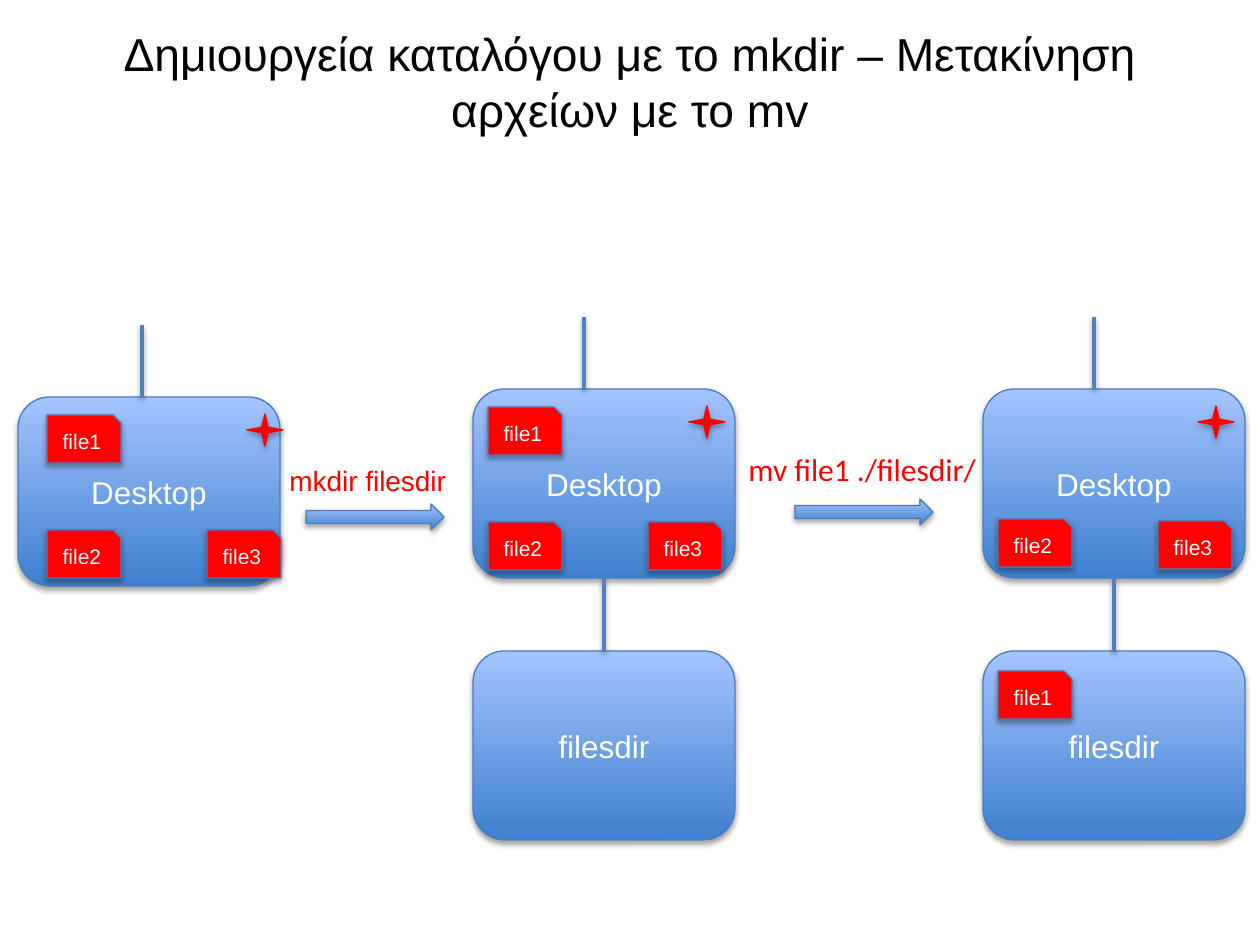
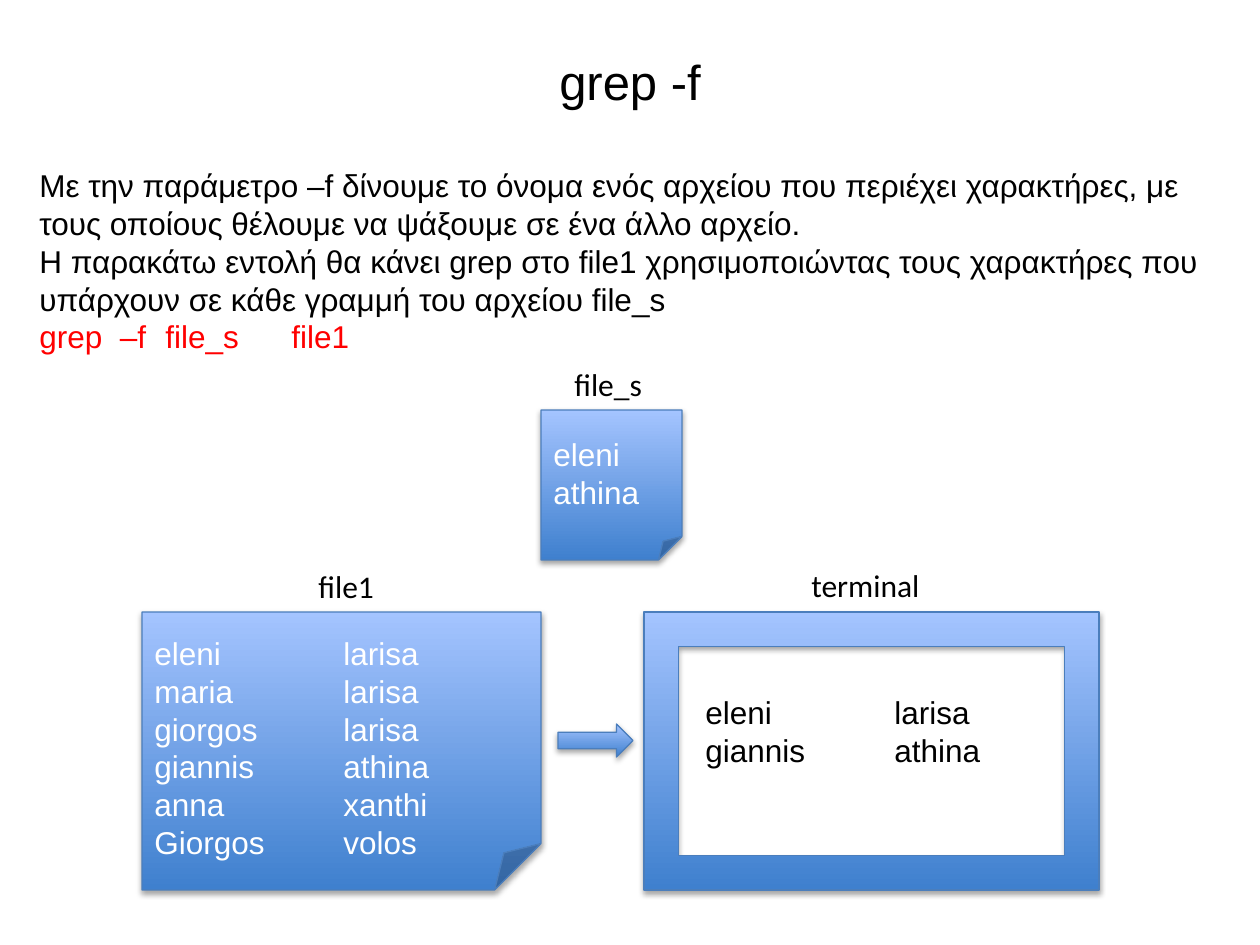
"""Build two slides on shell commands: mkdir with mv, and grep -f."""
from dataclasses import dataclass

from lxml.etree import SubElement
from pptx import Presentation
from pptx.dml.color import RGBColor
from pptx.enum.shapes import MSO_CONNECTOR, MSO_SHAPE
from pptx.enum.text import MSO_ANCHOR, MSO_AUTO_SIZE, PP_ALIGN
from pptx.oxml.ns import qn
from pptx.shapes.autoshape import Shape
from pptx.shapes.connector import Connector
from pptx.slide import Slide
from pptx.text.text import TextFrame
from pptx.util import Emu, Pt

PX_PER_INCH = 126
TAB_STEP = 63


@dataclass(frozen=True)
class TextStyle:
    """Font, size and colour of a text."""
    size: float
    color: str
    font: str = "Arial"


@dataclass(frozen=True)
class Theme:
    """Colours and type sizes of the deck."""
    gradient: tuple[str, str] = ("3F80CE", "A4C4FF")
    outline: str = "4B7EBC"
    stem: str = "4F81BD"
    accent: str = "FF0000"
    outline_width: float = 0.75
    stem_width: float = 2
    long_title: TextStyle = TextStyle(26.4, "000000")
    title: TextStyle = TextStyle(28, "000000")
    body: TextStyle = TextStyle(18, "000000")
    command: TextStyle = TextStyle(18, "FF0000")
    box: TextStyle = TextStyle(18, "FFFFFF")
    file: TextStyle = TextStyle(12, "FFFFFF")
    caption: TextStyle = TextStyle(18, "000000", "Calibri")
    mkdir: TextStyle = TextStyle(16, "FF0000")
    move: TextStyle = TextStyle(18, "FF0000", "Calibri")


THEME = Theme()


@dataclass(frozen=True)
class Area:
    """A rectangle in px."""
    left: int
    top: int
    width: int
    height: int

    def emu(self) -> tuple[Emu, Emu, Emu, Emu]:
        """Return the rectangle in EMU."""
        return px(self.left), px(self.top), px(self.width), px(self.height)


@dataclass(frozen=True)
class File:
    """A file tag, placed from the corner of its directory."""
    name: str
    left: int
    top: int


@dataclass(frozen=True)
class Directory:
    """A directory box with the files in it."""
    name: str
    left: int
    top: int
    files: tuple[File, ...] = ()


@dataclass(frozen=True)
class Stage:
    """The state of the tree after a command."""
    desktop: Directory
    stem_x: int
    star_x: int
    child: Directory | None = None


@dataclass(frozen=True)
class Label:
    """A one-line text without a frame."""
    text: str
    area: Area
    style: TextStyle = THEME.caption


STAGES = (
    Stage(Directory("Desktop", 18, 397, (File("file1", 29, 18), File("file2", 29, 133), File("file3", 189, 133))),
          142, 247),
    Stage(Directory("Desktop", 473, 389, (File("file1", 15, 18), File("file2", 15, 133), File("file3", 175, 133))),
          584, 689, Directory("filesdir", 473, 651)),
    Stage(Directory("Desktop", 983, 389, (File("file2", 15, 130), File("file3", 175, 132))),
          1094, 1198, Directory("filesdir", 983, 651, (File("file1", 15, 20),))),
)
COMMANDS = (
    Label("mkdir filesdir", Area(277, 457, 184, 47), THEME.mkdir),
    Label("mv file1 ./filesdir/", Area(736, 444, 256, 50), THEME.move),
)
COMMAND_ARROWS = (Area(306, 504, 138, 26), Area(795, 499, 138, 26))
CAPTIONS = (
    Label("file1", Area(306, 561, 82, 50)),
    Label("terminal", Area(799, 560, 135, 50)),
    Label("file_s", Area(562, 359, 95, 50)),
)
PEOPLE = (("eleni", "larisa"), ("maria", "larisa"), ("giorgos", "larisa"),
          ("giannis", "athina"), ("anna", "xanthi"), ("Giorgos", "volos"))
MATCHES = (("eleni", "larisa"), ("giannis", "athina"))
INTRO = (
    "Με την παράμετρο –f δίνουμε το όνομα ενός αρχείου που περιέχει χαρακτήρες, "
    "με τους οποίους θέλουμε να ψάξουμε σε ένα άλλο αρχείο.",
    "H παρακάτω εντολή θα κάνει grep στο file1 χρησιμοποιώντας τους χαρακτήρες "
    "που υπάρχουν σε κάθε γραμμή του αρχείου file_s",
    "grep  –f\tfile_s\tfile1",
)


def px(length: int) -> Emu:
    """Turn px into EMU."""
    return Emu(round(length * 914400 / PX_PER_INCH))


def table_lines(rows: tuple[tuple[str, str], ...]) -> tuple[str, ...]:
    """Join the two columns of each row by tabs."""
    return tuple("\t\t".join(row) for row in rows)


def write(frame: TextFrame, lines: tuple[str, ...], styles: tuple[TextStyle, ...],
          align: PP_ALIGN = PP_ALIGN.LEFT) -> None:
    """Write lines, the last style serving any lines left over."""
    frame.text = "\n".join(lines)
    for index, para in enumerate(frame.paragraphs):
        style = styles[min(index, len(styles) - 1)]
        para.alignment = align
        if "\t" in lines[index]:
            stops = SubElement(para._p.get_or_add_pPr(), qn("a:tabLst"))
            for step in range(1, 5):
                SubElement(stops, qn("a:tab"), pos=str(px(step * TAB_STEP)), algn="l")
        for span in para.runs:
            span.font.name = style.font
            span.font.size = Pt(style.size)
            span.font.color.rgb = RGBColor.from_string(style.color)


def add_shadow(item: Shape | Connector, distance: int, opacity: int) -> None:
    """Give a shape or connector a soft shadow below it."""
    effects = SubElement(item._element.spPr, qn("a:effectLst"))
    shadow = SubElement(effects, qn("a:outerShdw"), blurRad="40000", dist=str(distance),
                        dir="5400000", rotWithShape="0")
    color = SubElement(shadow, qn("a:srgbClr"), val="000000")
    SubElement(color, qn("a:alpha"), val=str(opacity * 1000))


def add_box(page: Slide, kind: MSO_SHAPE, area: Area, fill: str = "", outline: str = THEME.outline) -> Shape:
    """Add a shadowed shape, with the gradient unless a fill is given."""
    box = page.shapes.add_shape(kind, *area.emu())
    if fill:
        box.fill.solid()
        box.fill.fore_color.rgb = RGBColor.from_string(fill)
    else:
        box.fill.gradient()
        box.fill.gradient_angle = 90
        for stop, color in zip(box.fill.gradient_stops, THEME.gradient):
            stop.color.rgb = RGBColor.from_string(color)
    box.line.color.rgb = RGBColor.from_string(outline)
    box.line.width = Pt(THEME.outline_width)
    add_shadow(box, 23000, 35)
    return box


def add_stem(page: Slide, x: int, top: int, bottom: int) -> Connector:
    """Add a vertical line of the tree."""
    stem = page.shapes.add_connector(MSO_CONNECTOR.STRAIGHT, px(x), px(top), px(x), px(bottom))
    stem.line.color.rgb = RGBColor.from_string(THEME.stem)
    stem.line.width = Pt(THEME.stem_width)
    add_shadow(stem, 20000, 38)
    return stem


def add_text(page: Slide, area: Area, lines: tuple[str, ...], styles: tuple[TextStyle, ...],
             wrap: bool = True) -> None:
    """Add a text box."""
    frame = page.shapes.add_textbox(*area.emu()).text_frame
    frame.word_wrap = wrap
    frame.auto_size = MSO_AUTO_SIZE.SHAPE_TO_FIT_TEXT
    write(frame, lines, styles)


def add_label(page: Slide, label: Label) -> None:
    """Add a one-line label."""
    add_text(page, label.area, (label.text,), (label.style,), wrap=False)


def add_note(page: Slide, area: Area, lines: tuple[str, ...]) -> TextFrame:
    """Add a sheet with a folded corner."""
    frame = add_box(page, MSO_SHAPE.FOLDED_CORNER, area).text_frame
    write(frame, lines, (THEME.box,))
    return frame


def add_directory(page: Slide, directory: Directory) -> Shape:
    """Add a directory box and its files."""
    box = add_box(page, MSO_SHAPE.ROUNDED_RECTANGLE, Area(directory.left, directory.top, 262, 189))
    write(box.text_frame, (directory.name,), (THEME.box,), PP_ALIGN.CENTER)
    for file in directory.files:
        area = Area(directory.left + file.left, directory.top + file.top, 74, 48)
        tag = add_box(page, MSO_SHAPE.SNIP_1_RECTANGLE, area, THEME.accent)
        write(tag.text_frame, (file.name,), (THEME.file,), PP_ALIGN.CENTER)
    return box


def add_stage(page: Slide, stage: Stage) -> None:
    """Add the desktop, its star and stem, and any child directory."""
    top = stage.desktop.top
    desktop = add_directory(page, stage.desktop)
    add_box(page, MSO_SHAPE.STAR_4_POINT, Area(stage.star_x, top + 17, 36, 32), THEME.accent, THEME.accent)
    add_stem(page, stage.stem_x, top - 72, top)
    if stage.child:
        child = add_directory(page, stage.child)
        link = add_stem(page, stage.child.left + 131, top + 189, stage.child.top)
        link.begin_connect(desktop, 2)
        link.end_connect(child, 0)


def add_page(deck: Presentation, title: str, style: TextStyle) -> Slide:
    """Add a slide with a centred title."""
    page = deck.slides.add_slide(deck.slide_layouts[5])
    heading = page.shapes.title
    heading.left, heading.top, heading.width, heading.height = Area(63, 38, 1134, 86).emu()
    frame = heading.text_frame
    frame.auto_size = MSO_AUTO_SIZE.NONE
    frame.vertical_anchor = MSO_ANCHOR.MIDDLE
    write(frame, (title,), (style,), PP_ALIGN.CENTER)
    return page


def build_move_page(deck: Presentation) -> None:
    """Show a directory made and a file moved into it."""
    page = add_page(deck, "Δημιουργεία καταλόγου με το mkdir – Μετακίνηση αρχείων με το mv", THEME.long_title)
    for stage in STAGES:
        add_stage(page, stage)
    for command, arrow in zip(COMMANDS, COMMAND_ARROWS):
        add_label(page, command)
        add_box(page, MSO_SHAPE.RIGHT_ARROW, arrow)


def build_grep_page(deck: Presentation) -> None:
    """Show a search with patterns read from a file."""
    page = add_page(deck, "grep -f", THEME.title)
    add_text(page, Area(27, 160, 1211, 204), INTRO, (THEME.body, THEME.body, THEME.command))
    people = add_note(page, Area(142, 612, 399, 278), table_lines(PEOPLE))
    people.vertical_anchor = MSO_ANCHOR.TOP
    people.margin_top = px(22)
    add_box(page, MSO_SHAPE.RIGHT_ARROW, Area(558, 724, 75, 33))
    add_box(page, MSO_SHAPE.FRAME, Area(644, 612, 455, 278))
    add_text(page, Area(693, 687, 364, 89), table_lines(MATCHES), (THEME.body,))
    add_note(page, Area(541, 410, 141, 150), ("eleni", "athina"))
    for caption in CAPTIONS:
        add_label(page, caption)


def main() -> None:
    """Build and save the deck."""
    deck = Presentation()
    deck.slide_width, deck.slide_height = px(1260), px(945)
    build_move_page(deck)
    build_grep_page(deck)
    deck.save("out.pptx")


if __name__ == "__main__":
    main()
